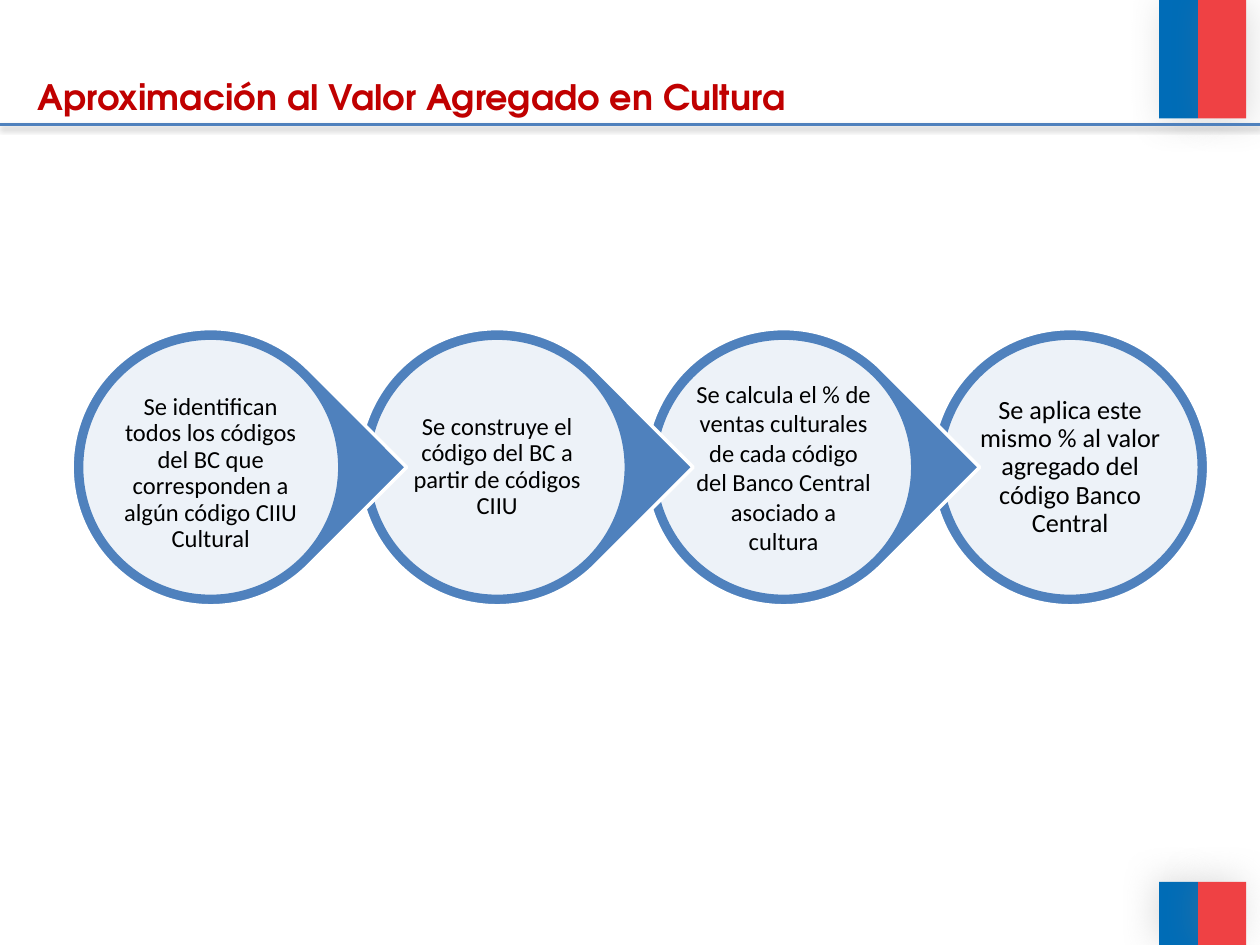
import pptx
import pptx.dml.color
import pptx.enum.shapes
import pptx.enum.text
import pptx.oxml
import pptx.oxml.ns
import pptx.util
from dataclasses import dataclass

Pt = pptx.util.Pt
Kind = pptx.enum.shapes.MSO_SHAPE
Align = pptx.enum.text.PP_ALIGN
Anchor = pptx.enum.text.MSO_ANCHOR


@dataclass(frozen=True)
class Theme:
    blue: str = "006CB7"
    red: str = "EF4144"
    ring: str = "4F81BD"
    white: str = "FFFFFF"
    title: str = "C00000"
    text: str = "000000"
    shade: str = "808080"
    head: str = "TeX Gyre Adventor"
    body: str = "Calibri"
    big: int = 20
    mid: int = 15
    small: int = 14


def rgb(code):
    return pptx.dml.color.RGBColor.from_string(code)


class Board:
    def __init__(self, slide, theme):
        self.slide = slide
        self.theme = theme

    def shade(self, item, alpha, blur, dist, angle):
        """Give the item an outer shadow; alpha in percent, angle in degrees."""
        props = item._element.spPr
        for old in props.findall(pptx.oxml.ns.qn("a:effectLst")):
            props.remove(old)
        props.append(pptx.oxml.parse_xml(
            f'<a:effectLst {pptx.oxml.ns.nsdecls("a")}>'
            f'<a:outerShdw blurRad="{Pt(blur)}" dist="{Pt(dist)}" '
            f'dir="{angle * 60000}" algn="ctr" rotWithShape="0">'
            f'<a:srgbClr val="{self.theme.shade}">'
            f'<a:alpha val="{alpha * 1000}"/></a:srgbClr>'
            '</a:outerShdw></a:effectLst>'))

    def shape(self, kind, box, fill, line=None, alpha=100):
        item = self.slide.shapes.add_shape(kind, *map(Pt, box))
        item.shadow.inherit = False
        item.fill.solid()
        item.fill.fore_color.rgb = rgb(fill)
        if alpha < 100:
            color = item._element.spPr.find(".//" + pptx.oxml.ns.qn("a:srgbClr"))
            color.append(pptx.oxml.parse_xml(
                f'<a:alpha {pptx.oxml.ns.nsdecls("a")} val="{alpha * 1000}"/>'))
        if line:
            item.line.color.rgb = rgb(line)
            item.line.width = Pt(2)
        else:
            item.line.fill.background()
        return item

    def bar(self, box, fill, angle):
        self.shade(self.shape(Kind.RECTANGLE, box, fill), 25, 20, 3, angle)

    def rule(self, y, width):
        line = self.slide.shapes.add_connector(
            pptx.enum.shapes.MSO_CONNECTOR.STRAIGHT, 0, Pt(y), Pt(width), Pt(y))
        line.line.color.rgb = rgb(self.theme.ring)
        line.line.width = Pt(2)
        self.shade(line, 38, 3.1, 1.6, 90)

    def text(self, box, words, size, font, color, align, bold=False):
        item = self.slide.shapes.add_textbox(*map(Pt, box))
        frame = item.text_frame
        frame.word_wrap = True
        para = frame.paragraphs[0]
        para.alignment = align
        run = para.add_run()
        run.text = words
        run.font.size = Pt(size)
        run.font.name = font
        run.font.bold = bold
        run.font.color.rgb = rgb(color)
        return frame

    def title(self, box, words):
        look = self.theme
        frame = self.text(box, words, look.big, look.head, look.title,
                          Align.JUSTIFY, True)
        frame.auto_size = pptx.enum.text.MSO_AUTO_SIZE.SHAPE_TO_FIT_TEXT

    def step(self, left, top, words, size, space, drop, last):
        """Draw a ringed disc; all but the last point to the next one."""
        look = self.theme

        def inset(gap):
            return left + gap, top + gap, 158.4 - 2 * gap, 158.4 - 2 * gap

        kind = Kind.OVAL if last else Kind.TEAR
        back = self.shape(kind, inset(0), look.ring, look.white)
        back.rotation = 0 if last else 45
        self.shape(Kind.OVAL, inset(5.4), look.white, look.ring, 90)
        frame = self.text(inset(26.4), words, size, look.body, look.text,
                          Align.CENTER)
        frame.vertical_anchor = Anchor.MIDDLE
        frame.margin_left = frame.margin_right = frame.margin_bottom = Pt(1.2)
        frame.margin_top = Pt(1.2 + drop)
        frame.paragraphs[0].line_spacing = space


def main():
    look = Theme()
    deck = pptx.Presentation()
    deck.slide_width, deck.slide_height = Pt(720), Pt(540)
    board = Board(deck.slides.add_slide(deck.slide_layouts[6]), look)

    for top, height, angle in ((0, 67.6, 45), (504, 36, 215)):
        board.bar((662.4, top, 22.3, height), look.blue, angle)
        board.bar((684.7, top, 27.4, height), look.red, angle)

    # words, type size, line spacing, extra space above
    steps = [
        ("Se identifican todos los códigos del BC que corresponden a algún "
         "código CIIU Cultural", look.small, 0.9, 7),
        ("Se construye el código del BC a partir de códigos CIIU",
         look.small, 0.9, 0),
        ("Se calcula el % de ventas culturales de cada código del Banco "
         "Central asociado a cultura", look.small, 1.0, 0),
        ("Se aplica este mismo % al valor agregado del código Banco Central",
         look.mid, 0.9, 0),
    ]
    final = len(steps) - 1
    for spot in range(final, -1, -1):
        board.step(41.2 + 163.7 * spot, 187.8, *steps[spot], spot == final)

    board.rule(71.2, 720)
    board.title((14.4, 39.6, 614, 31.5),
                "Aproximación al Valor Agregado en Cultura")
    deck.save("out.pptx")


if __name__ == "__main__":
    main()
